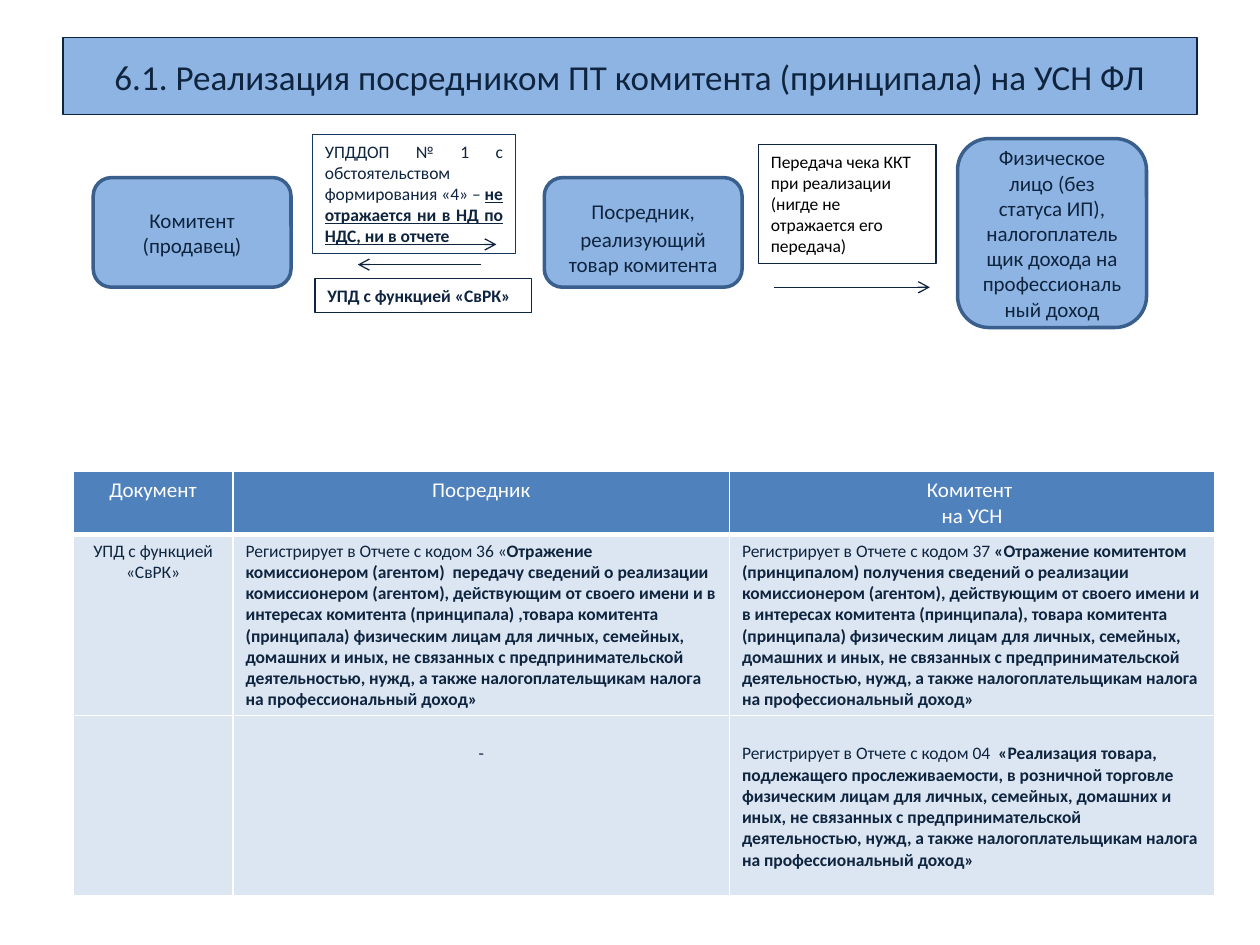
from dataclasses import dataclass

from lxml.etree import SubElement
from pptx import Presentation
from pptx.dml.color import RGBColor
from pptx.enum.shapes import MSO_CONNECTOR, MSO_SHAPE
from pptx.enum.text import MSO_ANCHOR, MSO_AUTO_SIZE, PP_ALIGN
from pptx.oxml.ns import qn
from pptx.util import Inches, Pt


@dataclass(frozen=True)
class Theme:
    font: str = "Calibri"
    ink: str = "0F243E"
    black: str = "000000"
    white: str = "FFFFFF"
    panel: str = "8EB4E3"
    panel_edge: str = "3A5F8C"
    note_edge: str = "17375E"
    header: str = "4F81BD"
    body: str = "DCE6F2"
    title_size: float = 20
    wide_space: float = 18
    label_size: float = 12
    note_size: float = 10
    hairline: float = 0.75


THEME = Theme()
GOODS_BUYERS = (
    "физическим лицам для личных, семейных, домашних и иных, не связанных с "
    "предпринимательской деятельностью, нужд, а также налогоплательщикам налога "
    "на профессиональный доход»"
)
HEADINGS = ["Документ", "Посредник", "Комитент \nна УСН"]
AGENT_ENTRY = [
    ("Регистрирует в Отчете с кодом 36 «", {}),
    ("Отражение комиссионером (агентом)  передачу сведений о реализации "
     "комиссионером (агентом), действующим от своего имени и в интересах комитента "
     "(принципала) ,товара комитента (принципала) " + GOODS_BUYERS, {"bold": True}),
]
PRINCIPAL_ENTRY = [
    ("Регистрирует в Отчете с кодом 37 ", {}),
    ("«Отражение комитентом (принципалом) получения сведений о реализации "
     "комиссионером (агентом), действующим от своего имени и в интересах комитента "
     "(принципала), товара комитента (принципала) " + GOODS_BUYERS, {"bold": True}),
]
RETAIL_ENTRY = [
    ("Регистрирует в Отчете с кодом 04  ", {}),
    ("«Реализация товара, подлежащего прослеживаемости, в розничной торговле "
     + GOODS_BUYERS, {"bold": True}),
]


def color(value):
    return RGBColor.from_string(value)


def format_span(span, size, ink, bold=False, underline=False):
    font = span.font
    font.name, font.size = THEME.font, Pt(size)
    font.bold, font.underline = bold, underline
    font.color.rgb = color(ink)


def write(frame, spans, size, ink=THEME.ink, align=PP_ALIGN.LEFT):
    """Write plain text, or a list of (text, style) pairs as one paragraph."""
    if isinstance(spans, str):
        frame.text = spans
        for para in frame.paragraphs:
            para.alignment = align
            for span in para.runs:
                format_span(span, size, ink)
        return
    para = frame.paragraphs[0]
    para.alignment = align
    for text, style in spans:
        span = para.add_run()
        span.text = text
        format_span(span, **{"size": size, "ink": ink, **style})


def outline(line, ink=THEME.ink, width=THEME.hairline):
    line.color.rgb = color(ink)
    line.width = Pt(width)


def paint(shape, value):
    shape.fill.solid()
    shape.fill.fore_color.rgb = color(value)


def set_title(slide, text):
    title = slide.shapes.title
    title.left, title.top = Inches(0.5), Inches(0.3)
    title.width, title.height = Inches(9), Inches(0.61)
    paint(title, THEME.panel)
    outline(title.line)
    frame = title.text_frame
    write(frame, text, THEME.title_size, align=PP_ALIGN.CENTER)
    frame.auto_size = MSO_AUTO_SIZE.NONE
    frame.vertical_anchor = MSO_ANCHOR.MIDDLE


def add_party(slide, place, spans):
    box = slide.shapes.add_shape(MSO_SHAPE.ROUNDED_RECTANGLE, *map(Inches, place))
    box.shadow.inherit = False
    paint(box, THEME.panel)
    outline(box.line, THEME.panel_edge, 2)
    box.text_frame.word_wrap = True
    box.text_frame.vertical_anchor = MSO_ANCHOR.MIDDLE
    write(box.text_frame, spans, THEME.label_size, align=PP_ALIGN.CENTER)


def add_note(slide, place, spans, ink=THEME.ink, edge=THEME.ink, align=PP_ALIGN.LEFT):
    box = slide.shapes.add_textbox(*map(Inches, place))
    outline(box.line, edge)
    box.text_frame.word_wrap = True
    box.text_frame.auto_size = MSO_AUTO_SIZE.SHAPE_TO_FIT_TEXT
    write(box.text_frame, spans, THEME.note_size, ink, align)


def add_arrow(slide, start, end, y):
    arrow = slide.shapes.add_connector(
        MSO_CONNECTOR.STRAIGHT, Inches(start), Inches(y), Inches(end), Inches(y))
    outline(arrow.line)
    SubElement(arrow.line._get_or_add_ln(), qn("a:tailEnd"), type="arrow")
    SubElement(arrow._element.spPr, qn("a:effectLst"))


def set_borders(cell, bottom=1):
    properties = cell._tc.get_or_add_tcPr()
    for side, width in (("L", 1), ("R", 1), ("T", 1), ("B", bottom)):
        line = SubElement(properties, qn(f"a:ln{side}"), w=str(Pt(width)))
        fill = SubElement(line, qn("a:solidFill"))
        SubElement(fill, qn("a:srgbClr"), val=THEME.white)


def add_register(slide):
    widths, heights = [1.27, 3.94, 3.85], [0.5, 1.44, 1.43]
    table = slide.shapes.add_table(
        len(heights), len(widths), Inches(0.58), Inches(3.74),
        Inches(sum(widths)), Inches(sum(heights))).table
    for column, width in zip(table.columns, widths):
        column.width = Inches(width)
    for row, height in zip(table.rows, heights):
        row.height = Inches(height)

    center, left = PP_ALIGN.CENTER, PP_ALIGN.LEFT
    for cell, heading in zip(table.rows[0].cells, HEADINGS):
        set_borders(cell, bottom=3)
        paint(cell, THEME.header)
        write(cell.text_frame, heading, THEME.label_size, THEME.white, center)

    entries = [
        [("УПД с функцией «СвРК»", center), (AGENT_ENTRY, left), (PRINCIPAL_ENTRY, left)],
        [("", center), ("-", center), (RETAIL_ENTRY, left)],
    ]
    for number, line in enumerate(entries, start=1):
        for cell, (spans, align) in zip(table.rows[number].cells, line):
            set_borders(cell)
            paint(cell, THEME.body)
            write(cell.text_frame, spans, THEME.note_size, align=align)
    for cell in table.rows[2].cells:
        cell.margin_top = Inches(0.22)


def main():
    deck = Presentation()
    deck.slide_width, deck.slide_height = Inches(10), Inches(7.5)
    slide = deck.slides.add_slide(deck.slide_layouts[5])
    set_title(slide, "6.1. Реализация посредником ПТ комитента (принципала) на УСН ФЛ")

    add_party(slide, (0.74, 1.41, 1.57, 0.87), "Комитент (продавец)")
    add_party(slide, (4.32, 1.41, 1.57, 0.87), [
        ("Посредник,", {}),
        (" ", {"size": THEME.wide_space}),
        ("реализующий товар комитента", {}),
    ])
    add_party(slide, (7.6, 1.1, 1.5, 1.5),
              "Физическое лицо (без статуса ИП), налогоплательщик дохода "
              "на профессиональный доход")

    add_arrow(slide, 6.14, 7.38, 2.28)
    add_note(slide, (2.5, 2.21, 1.72, 0.27), [("УПД с функцией «СвРК»", {"bold": True})])
    add_note(slide, (6.02, 1.15, 1.41, 0.94),
             "Передача чека ККТ при реализации (нигде не отражается его передача)",
             ink=THEME.black)
    add_register(slide)
    add_arrow(slide, 3.82, 2.84, 2.1)
    add_arrow(slide, 2.74, 3.94, 1.94)
    add_note(slide, (2.48, 1.07, 1.61, 0.94), [
        ("УПДДОП № 1 с обстоятельством формирования «4» – ", {}),
        ("не отражается ни в НД по НДС, ни в отчете", {"bold": True, "underline": True}),
    ], edge=THEME.note_edge, align=PP_ALIGN.JUSTIFY)
    deck.save("out.pptx")


if __name__ == "__main__":
    main()
